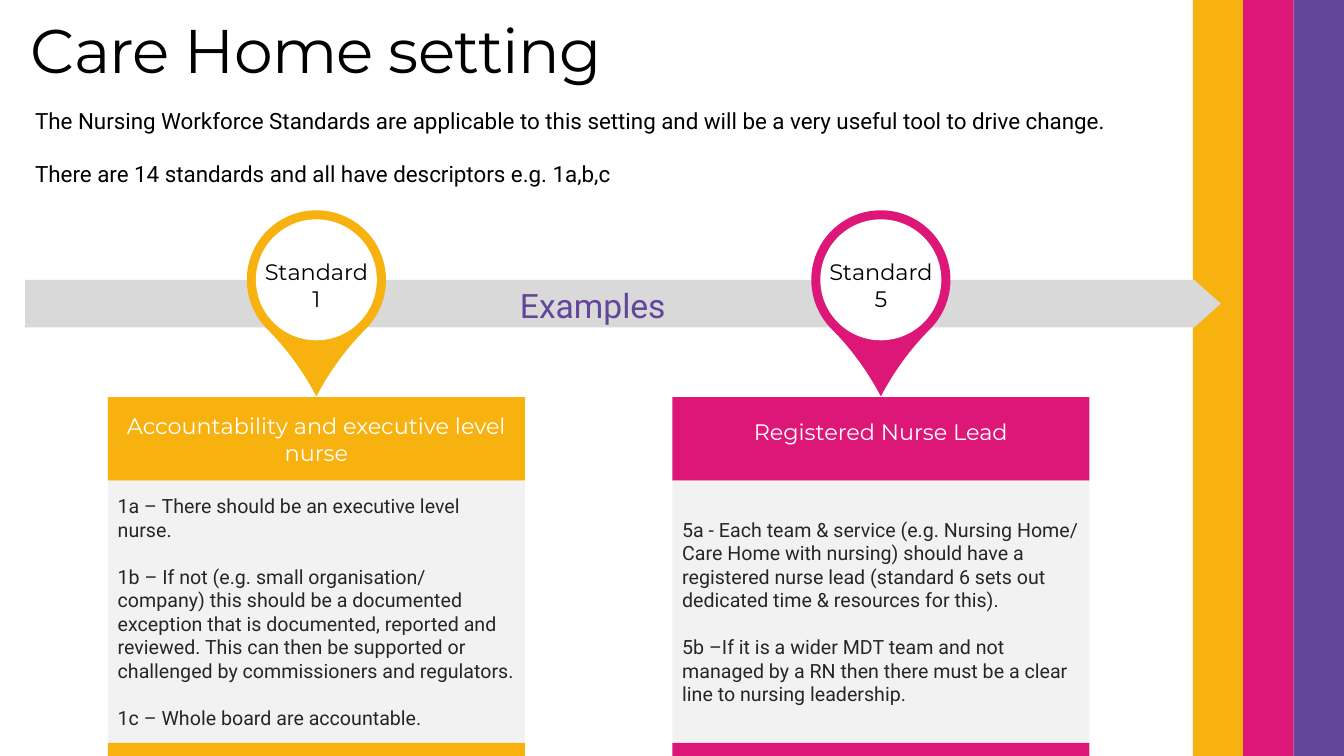
from pptx import Presentation
from pptx.dml.color import RGBColor
from pptx.enum.shapes import MSO_SHAPE
from pptx.enum.text import MSO_ANCHOR, PP_ALIGN
from pptx.util import Pt

YELLOW, PINK, PURPLE = "F7B20F", "DD1778", "63469A"
HEADING, BODY = "Montserrat", "Roboto"


def color(value):
    return RGBColor.from_string(value)


def add_block(s, kind, x, y, w, h, fill):
    sp = s.shapes.add_shape(kind, Pt(x), Pt(y), Pt(w), Pt(h))
    sp.shadow.inherit = False
    sp.fill.solid()
    sp.fill.fore_color.rgb = color(fill)
    sp.line.fill.background()
    return sp


def add_text(sp, lines, size, font, ink, align=PP_ALIGN.LEFT,
             anchor=MSO_ANCHOR.MIDDLE, gap=0, wrap=True):
    """Write one paragraph per line, with gap points between them."""
    tf = sp.text_frame
    tf.word_wrap = wrap
    tf.vertical_anchor = anchor
    for i, line in enumerate(lines):
        p = tf.add_paragraph() if i else tf.paragraphs[0]
        p.alignment = align
        p.space_before = Pt(gap if i else 0)
        r = p.add_run()
        r.text = line
        r.font.size = Pt(size)
        r.font.name = font
        r.font.color.rgb = color(ink)
    return tf


def add_label(s, x, y, w, h, lines, size, font, ink, **options):
    sp = s.shapes.add_textbox(Pt(x), Pt(y), Pt(w), Pt(h))
    return add_text(sp, lines, size, font, ink, **options)


def add_stripes(s, x, y, w, h):
    fills = (YELLOW, PINK, PURPLE)
    step = w / len(fills)
    for i, fill in enumerate(fills):
        add_block(s, MSO_SHAPE.RECTANGLE, x + i * step, y, step, h, fill)


def add_heading(s, x, y, w):
    tf = add_label(s, x, y, w, 64, ["Care Home setting"], 44, HEADING, "000000",
                   anchor=MSO_ANCHOR.BOTTOM)
    p = tf.paragraphs[0]
    p.line_spacing = 0.9
    p.runs[0].font._element.set("spc", "-50")
    add_label(s, x + 3, y + 71.3, 837, 65.5, [
        "The Nursing Workforce Standards are applicable to this setting "
        "and will be a very useful tool to drive change.",
        "There are 14 standards and all have descriptors e.g. 1a,b,c",
    ], 16, BODY, "000000", anchor=MSO_ANCHOR.TOP, gap=19)


def add_timeline(s, x, y, w, h):
    arrow = add_block(s, MSO_SHAPE.RIGHT_ARROW, x, y, w, h, "D9D9D9")
    arrow.adjustments[0] = 1
    arrow.adjustments[1] = 0.56
    add_label(s, x + 346.3, y, 126.7, 36, ["Examples"], 24, BODY, PURPLE,
              anchor=MSO_ANCHOR.TOP, wrap=False)


def add_pin(s, x, y, size, fill, number):
    drop = add_block(s, MSO_SHAPE.TEAR, x, y, size, size, fill)
    drop.adjustments[0] = 1.184
    drop.rotation = 135
    rim = 6.5
    hole = size - 2 * rim
    add_block(s, MSO_SHAPE.OVAL, x + rim, y + rim, hole, hole, "FFFFFF")
    add_label(s, x, y + 30.2, size, 46, ["Standard", number], 16, HEADING,
              "000000", align=PP_ALIGN.CENTER, wrap=False)


def add_standard(s, x, y, w, h, fill, number, title, descriptors, lift=0):
    """Stack pin, title band, descriptors and foot; lift raises the title."""
    pin, title_h, foot_h = 99.4, 59.8, 9.4
    title_y = y + 133.4
    body_y = title_y + title_h
    foot_y = y + h - foot_h
    add_pin(s, x + (w - pin) / 2, y, pin, fill, number)
    band = add_block(s, MSO_SHAPE.RECTANGLE, x, title_y, w, title_h, fill)
    tf = add_text(band, [title], 16, HEADING, "FFFFFF", align=PP_ALIGN.CENTER)
    tf.margin_bottom = Pt(3.6 + 2 * lift)
    body = add_block(s, MSO_SHAPE.RECTANGLE, x, body_y, w, foot_y - body_y, "F2F2F2")
    add_text(body, descriptors, 14, BODY, "262626", gap=16.8)
    add_block(s, MSO_SHAPE.RECTANGLE, x, foot_y, w, foot_h, fill)


def main():
    prs = Presentation()
    prs.slide_width, prs.slide_height = Pt(960), Pt(540)
    s = prs.slides.add_slide(prs.slide_layouts[6])
    add_stripes(s, 852, 0, 108, 540)
    add_heading(s, 15, 1.4, 763)
    add_timeline(s, 18, 200, 854, 33.8)
    add_standard(s, 77, 150.2, 298, 389.8, YELLOW, "1",
                 "Accountability and executive level nurse", [
                     "1a – There should be an executive level nurse.",
                     "1b – If not (e.g. small organisation/ company) this should be a "
                     "documented exception that is documented, reported and reviewed. "
                     "This can then be supported or challenged by commissioners and "
                     "regulators.",
                     "1c – Whole board are accountable.",
                 ])
    add_standard(s, 480.2, 150.2, 298, 389.8, PINK, "5", "Registered Nurse Lead", [
        "5a - Each team & service (e.g. Nursing Home/ Care Home with nursing) "
        "should have a registered nurse lead (standard 6 sets out dedicated "
        "time & resources for this).",
        "5b –If it is a wider MDT team and not managed by a RN then there must "
        "be a clear line to nursing leadership.",
    ], lift=5)
    prs.save("out.pptx")


if __name__ == "__main__":
    main()
